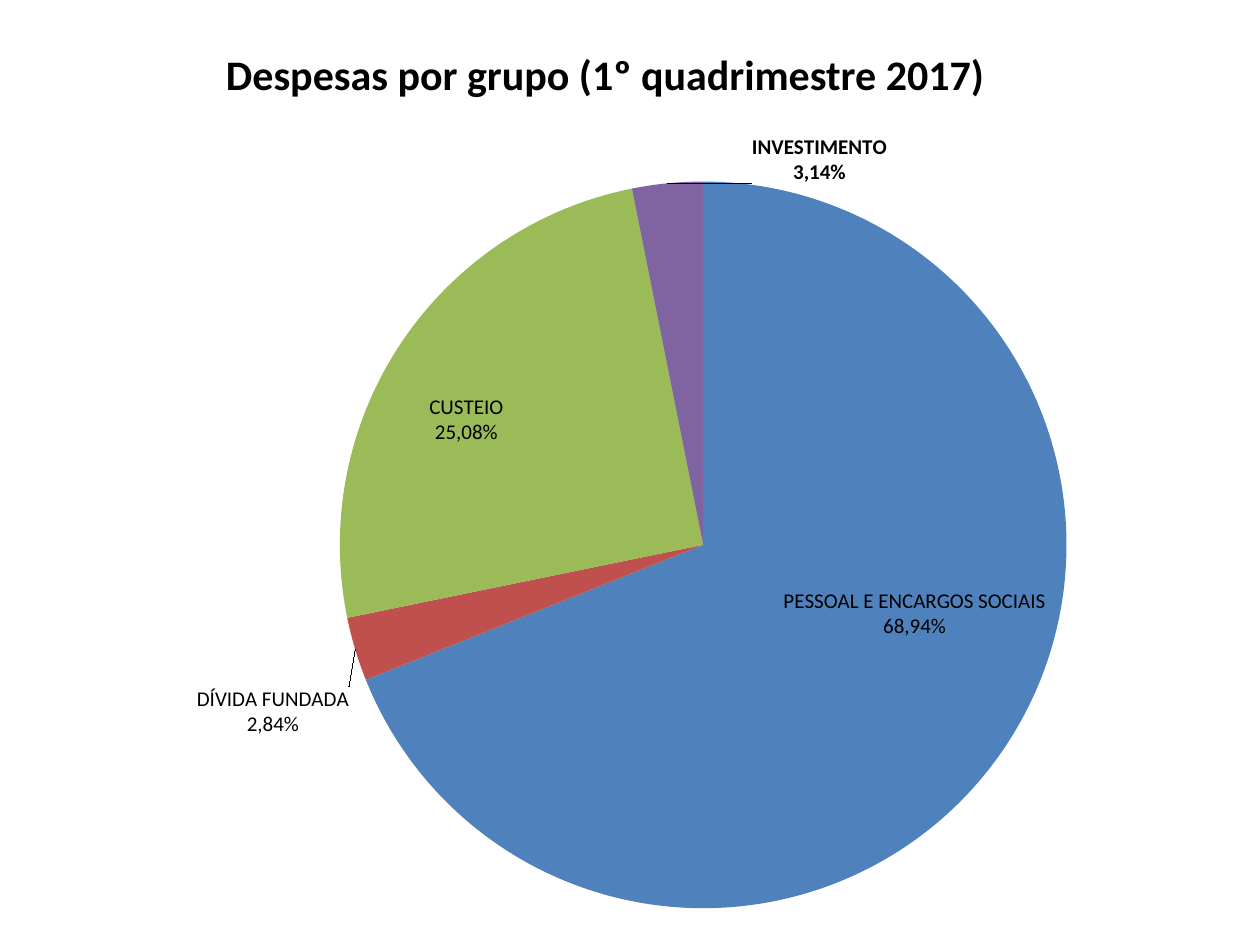
from lxml import etree
from pptx import Presentation
from pptx import util as u
from pptx.chart.data import CategoryChartData
from pptx.dml.color import RGBColor
from pptx.enum import chart as ch, text
from pptx.oxml.ns import qn

GROUPS = [
    ("PESSOAL E ENCARGOS SOCIAIS", 0.6894, "4F81BD", (0.05, -0.04), False),
    ("DÍVIDA FUNDADA", 0.0284, "C0504D", (-0.21, 0.14), False),
    ("CUSTEIO", 0.2508, "9BBB59", (-0.07, -0.03), False),
    ("INVESTIMENTO", 0.0314, "8064A2", (0.11, -0.25), True),
]


def color(value):
    return RGBColor.from_string(value)


def write(tf, content, *, size, bold=False, fill="000000", font="Calibri"):
    for i, line in enumerate(content.split("\n")):
        p = tf.add_paragraph() if i else tf.paragraphs[0]
        p.alignment = text.PP_ALIGN.CENTER
        r = p.add_run()
        r.text = line
        r.font.name, r.font.size, r.font.bold = font, u.Pt(size), bold
        r.font.color.rgb = color(fill)


def add_layout(parent, index, **values):
    for old in parent.findall(qn("c:layout")):
        parent.remove(old)
    layout = etree.Element(qn("c:layout"))
    manual = etree.SubElement(layout, qn("c:manualLayout"))
    for tag, value in values.items():
        etree.SubElement(manual, qn(f"c:{tag}")).set("val", str(value))
    parent.insert(index, layout)


class Deck:
    """Hold the presentation style and the current slide."""

    title_size = 24
    label_size = 12
    font = "Calibri"

    def __init__(self):
        self.prs = Presentation()
        self.prs.slide_width, self.prs.slide_height = u.Cm(25.4), u.Cm(19.05)
        self.s = self.prs.slides.add_slide(self.prs.slide_layouts.get_by_name("Title Only"))

    def title(self, content, x, y, w, h):
        sp = self.s.shapes.title
        sp.left, sp.top, sp.width, sp.height = map(u.Cm, (x, y, w, h))
        tf = sp.text_frame
        tf.auto_size = text.MSO_AUTO_SIZE.NONE
        write(tf, content, size=self.title_size, bold=True, font=self.font)

    def pie(self, groups, x, y, w, h):
        data = CategoryChartData(number_format="0.00%")
        data.categories = [name for name, *_ in groups]
        data.add_series("", [value for _, value, *_ in groups])
        frame = self.s.shapes.add_chart(ch.XL_CHART_TYPE.PIE, *map(u.Cm, (x, y, w, h)), data)
        chart = frame.chart
        chart.has_title = chart.has_legend = False
        chart.font.name, chart.font.size = self.font, u.Pt(10)
        chart.font.color.rgb = color("000000")
        chart.plots[0].vary_by_categories = True
        series = chart.plots[0].series[0]
        labels = series.data_labels
        labels.show_value = True
        labels.number_format, labels.number_format_is_linked = "0.00%", False
        for i, (name, value, fill, _, bold) in enumerate(groups):
            point = series.points[i]
            point.format.fill.solid()
            point.format.fill.fore_color.rgb = color(fill)
            label = point.data_label
            percent = f"{value:.2%}".replace(".", ",")
            write(label.text_frame, f"{name}\n{percent}",
                  size=self.label_size, bold=bold, font=self.font)
            label.position = ch.XL_LABEL_POSITION.CENTER
        root = chart.element if hasattr(chart, "element") else chart._chartSpace
        for node, (*_, (dx, dy), _) in zip(root.iter(qn("c:dLbl")), groups):
            add_layout(node, 1, x=dx, y=dy)
        plot_area = next(root.iter(qn("c:plotArea")))
        add_layout(plot_area, 0, layoutTarget="inner", xMode="edge", yMode="edge",
                   x=0.26, y=0.09, w=0.6, h=0.89)

    def save(self):
        self.prs.save("out.pptx")


def main():
    deck = Deck()
    deck.title("Despesas por grupo (1º quadrimestre 2017)", 3.7, 0.85, 17, 1.28)
    deck.pie(GROUPS, 0.4, 2.18, 24.6, 16.46)
    deck.save()


if __name__ == "__main__":
    main()
